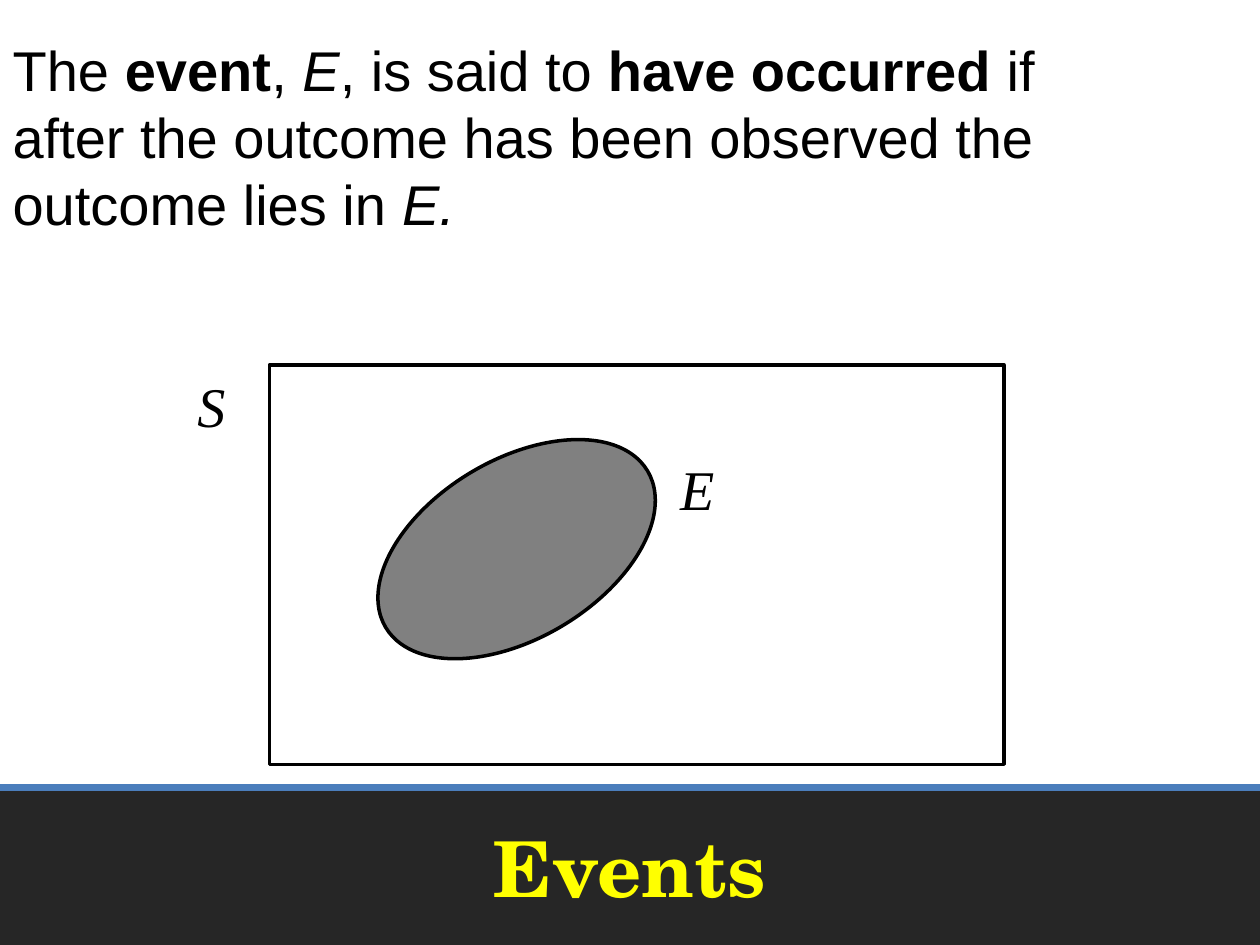
from lxml import etree
from pptx import Presentation
from pptx.dml.color import RGBColor
from pptx.enum.shapes import MSO_CONNECTOR, MSO_SHAPE
from pptx.enum.text import MSO_ANCHOR, MSO_AUTO_SIZE, PP_ALIGN
from pptx.oxml.ns import qn
from pptx.util import Cm, Pt

RECTANGLE, OVAL = MSO_SHAPE.RECTANGLE, MSO_SHAPE.OVAL
STRAIGHT = MSO_CONNECTOR.STRAIGHT
MIDDLE, TOP = MSO_ANCHOR.MIDDLE, MSO_ANCHOR.TOP
CENTER = PP_ALIGN.CENTER
NO_AUTOFIT = MSO_AUTO_SIZE.NONE

BLACK = RGBColor(0x00, 0x00, 0x00)
GREY = RGBColor(0x80, 0x80, 0x80)
CHARCOAL = RGBColor(0x26, 0x26, 0x26)
BLUE = RGBColor(0x4B, 0x7E, 0xBC)
YELLOW = RGBColor(0xFF, 0xFF, 0x00)

TITLE_FORMAT = {"name": "TeX Gyre Schola", "size": Pt(44), "bold": True}
BODY_FORMAT = {"name": "Arial", "size": Pt(32)}
LABEL_FORMAT = {"name": "Times New Roman", "size": Pt(32), "italic": True}


def add_run(paragraph, text, color, font_format):
    run = paragraph.add_run()
    run.text = text
    run.font.color.rgb = color
    for name, value in font_format.items():
        setattr(run.font, name, value)


def place(shape, left, top, width, height):
    """Move and size a shape, in centimetres."""
    bounds = {"left": left, "top": top, "width": width, "height": height}
    for name, value in bounds.items():
        setattr(shape, name, Cm(value))


presentation = Presentation()
presentation.slide_width = Cm(25.4)
presentation.slide_height = Cm(19.05)
slide = presentation.slides.add_slide(presentation.slide_layouts[1])
shapes = slide.shapes
title, body = shapes.title, slide.placeholders[1]

# Title band along the bottom, behind the title
band = shapes.add_shape(RECTANGLE, Cm(0), Cm(15.88), Cm(25.4), Cm(3.17))
band.shadow.inherit = False
band.fill.solid()
band.fill.fore_color.rgb = CHARCOAL
band.line.fill.background()

band_edge = shapes.add_connector(STRAIGHT, Cm(0), Cm(15.88), Cm(25.4), Cm(15.88))
band_edge.line.color.rgb = BLUE
band_edge.line.width = Pt(4)
etree.SubElement(band_edge._element.spPr, qn("a:effectLst"))

for shape in (band, band_edge):
    title._element.addprevious(shape._element)

# Title
place(title, 1.27, 15.88, 22.86, 3.17)
title.text_frame.auto_size = NO_AUTOFIT
title.text_frame.vertical_anchor = MIDDLE
paragraph = title.text_frame.paragraphs[0]
paragraph.alignment = CENTER
add_run(paragraph, "Events", YELLOW, TITLE_FORMAT)

# Definition, without a bullet
place(body, 0, 0.58, 22.86, 4.45)
body.text_frame.auto_size = NO_AUTOFIT
body.text_frame.vertical_anchor = TOP
paragraph = body.text_frame.paragraphs[0]
properties = paragraph._p.get_or_add_pPr()
for name in ("marL", "indent"):
    properties.set(name, "0")
etree.SubElement(properties, qn("a:buNone"))
definition = [
    ("The ", {}),
    ("event", {"bold": True}),
    (", ", {}),
    ("E", {"italic": True}),
    (", is said to ", {}),
    ("have occurred", {"bold": True}),
    (" if after the outcome has been observed the outcome lies in ", {}),
    ("E.", {"italic": True}),
]
for text, emphasis in definition:
    add_run(paragraph, text, BLACK, {**BODY_FORMAT, **emphasis})

# Venn diagram: sample space and event
sample_space = shapes.add_shape(RECTANGLE, Cm(5.43), Cm(7.36), Cm(14.81), Cm(8.05))
sample_space.fill.background()
event = shapes.add_shape(OVAL, Cm(7.34), Cm(9.27), Cm(6.15), Cm(3.6))
event.rotation = 329.1
event.fill.solid()
event.fill.fore_color.rgb = GREY
for shape in (sample_space, event):
    shape.shadow.inherit = False
    shape.line.color.rgb = BLACK
    shape.line.width = Pt(2)

for text, left, top in (("S", 3.73, 7.36), ("E", 13.46, 9.04)):
    label = shapes.add_textbox(Cm(left), Cm(top), Cm(2.33), Cm(1.47))
    label.text_frame.word_wrap = True
    paragraph = label.text_frame.paragraphs[0]
    paragraph.space_before = Pt(3.6)
    add_run(paragraph, text, BLACK, LABEL_FORMAT)

presentation.save("out.pptx")
